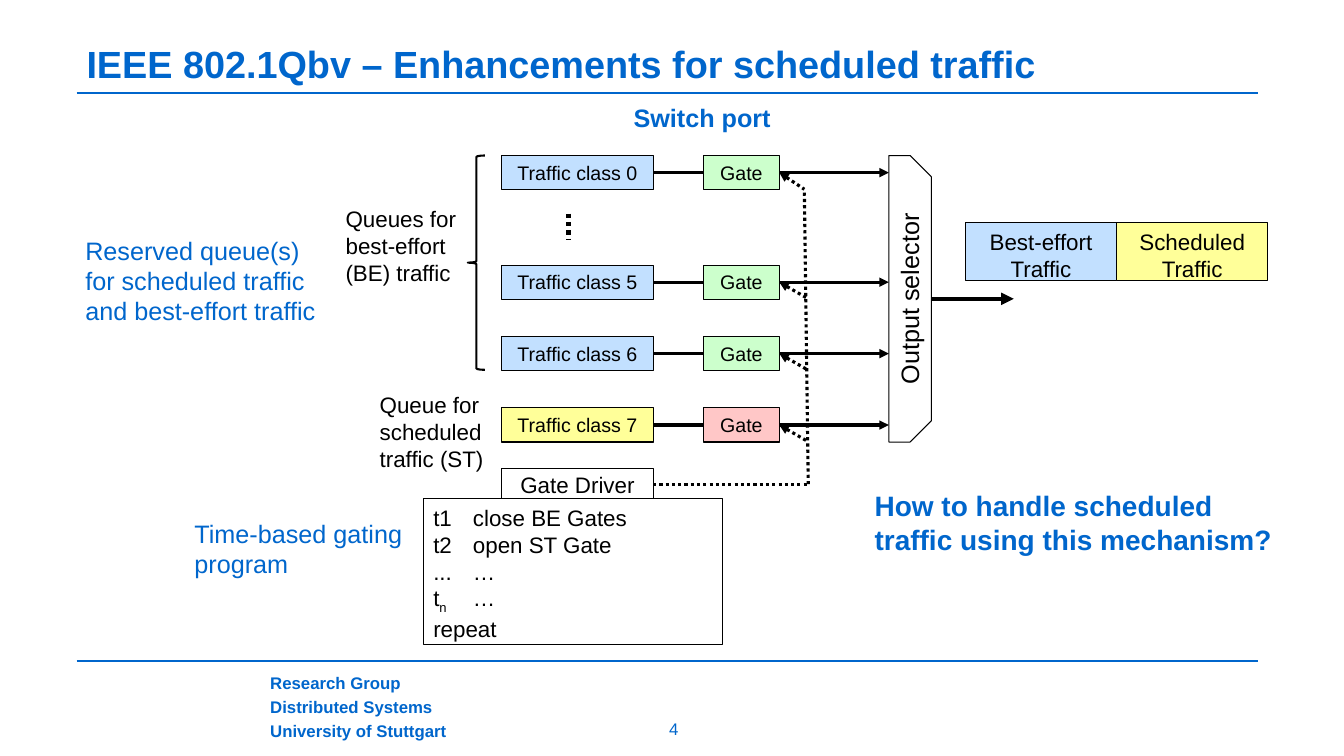
from lxml.etree import SubElement
from pptx import Presentation
from pptx.dml.color import RGBColor
from pptx.enum.dml import MSO_LINE
from pptx.enum.shapes import MSO_CONNECTOR, MSO_SHAPE
from pptx.enum.text import MSO_ANCHOR, MSO_AUTO_SIZE, PP_ALIGN
from pptx.oxml.ns import qn
from pptx.util import Cm, Pt

COLORS = {
    "accent": "0066CC",
    "ink": "000000",
    "paper": "FFFFFF",
    "best_effort": "C2E0FF",
    "scheduled": "FFFF99",
    "open_gate": "CCFFCC",
    "closed_gate": "FFC7C7",
}


def color(name):
    """Return the palette colour of that name."""
    return RGBColor.from_string(COLORS[name])


def add_run(paragraph, text, size, ink="ink", bold=False):
    """Append one formatted run to a paragraph."""
    run = paragraph.add_run()
    run.text = text
    run.font.name = "Arial"
    run.font.size = Pt(size)
    run.font.bold = bold
    run.font.color.rgb = color(ink)
    return run


def prepare_frame(frame, anchor=MSO_ANCHOR.TOP):
    """Give a text frame wrapping, standard insets and an anchor."""
    frame.word_wrap = True
    frame.auto_size = MSO_AUTO_SIZE.NONE
    frame.vertical_anchor = anchor
    frame.margin_left = frame.margin_right = Cm(0.25)
    frame.margin_top = frame.margin_bottom = Cm(0.13)


def add_label(slide, box, text, size, ink="ink", bold=False, align=PP_ALIGN.LEFT):
    """Place a one-paragraph text box."""
    label = slide.shapes.add_textbox(*map(Cm, box))
    prepare_frame(label.text_frame)
    paragraph = label.text_frame.paragraphs[0]
    paragraph.alignment = align
    add_run(paragraph, text, size, ink, bold)
    return label


def add_block(slide, box, fill, text="", size=14, anchor=MSO_ANCHOR.MIDDLE,
              preset=MSO_SHAPE.RECTANGLE):
    """Place an outlined shape with optional centred text."""
    block = slide.shapes.add_shape(preset, *map(Cm, box))
    block.shadow.inherit = False
    block.fill.solid()
    block.fill.fore_color.rgb = color(fill)
    block.line.color.rgb = color("ink")
    block.line.width = Pt(0.75)
    prepare_frame(block.text_frame, anchor)
    if text:
        paragraph = block.text_frame.paragraphs[0]
        paragraph.alignment = PP_ALIGN.CENTER
        add_run(paragraph, text, size)
    return block


def add_line(slide, start, end, width=2.25, ink="ink", dotted=False, arrow=None):
    """Draw a straight line, with an arrowhead at its headEnd or tailEnd."""
    line = slide.shapes.add_connector(
        MSO_CONNECTOR.STRAIGHT, *map(Cm, (*start, *end)))
    line.line.color.rgb = color(ink)
    line.line.width = Pt(width)
    if dotted:
        line.line.dash_style = MSO_LINE.ROUND_DOT
    if arrow:
        SubElement(line.line._get_or_add_ln(), qn(f"a:{arrow}"), type="triangle")
    SubElement(line._element.spPr, qn("a:effectLst"))


def draw_frame(slide, box):
    """Draw the title, the two rules and the footer."""
    left, top, width, height = box
    title = slide.shapes.title
    title.left, title.top, title.width, title.height = map(
        Cm, (left, top, width, 1.6))
    prepare_frame(title.text_frame, MSO_ANCHOR.MIDDLE)
    heading = title.text_frame.paragraphs[0]
    heading.alignment = PP_ALIGN.LEFT
    heading.line_spacing = 1.1
    add_run(heading, "IEEE 802.1Qbv – Enhancements for scheduled traffic",
            27, "accent", True)

    bottom_rule = top + 15.92
    for rule in (top + 1.6, bottom_rule):
        add_line(slide, (left, rule), (left + width, rule), 1, "accent")

    group = slide.shapes.add_textbox(
        *map(Cm, (left + 4.88, bottom_rule + 0.36, 6.05, 1.55))).text_frame
    group.margin_left = group.margin_right = group.margin_top = group.margin_bottom = 0
    names = ("Research Group", "Distributed Systems", "University of Stuttgart")
    for index, name in enumerate(names):
        paragraph = group.add_paragraph() if index else group.paragraphs[0]
        paragraph.line_spacing = 0.9
        paragraph.space_after = Pt(4)
        add_run(paragraph, name, 12, "accent", True)
    add_label(slide, (left + 12.14, top + height - 0.6, 5.82, 0.6), "4", 12,
              "accent", align=PP_ALIGN.CENTER)


def draw_port(slide, box):
    """Draw the queues, gates, gate driver and output selector."""
    left, top, width, height = box
    row_height, queue_width, gate_width, selector_width = 0.86, 3.81, 1.91, 1.07
    queue_left, gate_left = left + 0.86, left + 5.94
    queue_right, gate_right = queue_left + queue_width, gate_left + gate_width
    selector_left = left + width - selector_width
    bus_foot, bus_head = left + 8.58, left + 8.48
    wire = top + 8.28

    add_label(slide, (left + 3.68, top - 1.46, 4.45, 1.02), "Switch port", 18,
              "accent", True, PP_ALIGN.CENTER)
    brace = add_block(slide, (left, top, 0.43, 5.4), "paper",
                      preset=MSO_SHAPE.LEFT_BRACE)
    brace.fill.background()
    brace.line.width = Pt(1.5)
    add_label(slide, (left - 3.33, top + 1.13, 4.01, 2.31),
              "Queues for best-effort (BE) traffic", 16)
    add_label(slide, (left - 2.47, top + 5.81, 3.38, 2.31),
              "Queue for scheduled traffic (ST)", 16)
    dots = queue_left + 1.68
    add_line(slide, (dots, top + 1.46), (dots, top + 2.1), 3, dotted=True)

    add_block(slide, (queue_left, top + 7.89, queue_width, 1.04), "paper",
              "Gate Driver", 16, MSO_ANCHOR.TOP).text_frame.margin_top = Cm(0.05)
    add_line(slide, (queue_right, wire), (bus_foot, wire), dotted=True)
    add_line(slide, (bus_foot, wire), (bus_head, top + row_height), dotted=True)

    rows = (
        (0, 0, "best_effort", "open_gate", bus_head),
        (5, 2.76, "best_effort", "open_gate", bus_foot),
        (6, 4.56, "best_effort", "open_gate", bus_foot),
        (7, 6.36, "scheduled", "closed_gate", bus_foot),
    )
    for number, offset, queue_fill, gate_fill, branch in rows:
        row_top = top + offset
        middle = row_top + row_height / 2
        add_line(slide, (queue_right, middle), (gate_left, middle))
        add_line(slide, (gate_right, middle), (branch, middle + 0.42),
                 dotted=True, arrow="headEnd")
        add_line(slide, (gate_right, middle), (selector_left, middle),
                 arrow="tailEnd")
        add_block(slide, (queue_left, row_top, queue_width, row_height),
                  queue_fill, f"Traffic class {number}")
        add_block(slide, (gate_left, row_top, gate_width, row_height),
                  gate_fill, "Gate")

    sideways = (selector_left + (selector_width - height) / 2,
                top + (height - selector_width) / 2, height, selector_width)
    selector = add_block(slide, sideways, "paper",
                         preset=MSO_SHAPE.SNIP_2_SAME_RECTANGLE)
    selector.adjustments[0] = 0.5
    selector.rotation = 90
    add_label(slide, sideways, "Output selector", 18,
              align=PP_ALIGN.CENTER).rotation = 270
    output = top + height / 2
    add_line(slide, (left + width, output), (left + width + 2.08, output), 3,
             arrow="tailEnd")


def draw_traffic(slide, box):
    """Draw the two blocks of traffic leaving the port side by side."""
    left, top, width, height = box
    half = width / 2
    add_block(slide, (left, top, half, height), "best_effort",
              "Best-effort Traffic", 16, MSO_ANCHOR.TOP)
    add_block(slide, (left + half, top, half, height), "scheduled",
              "Scheduled Traffic", 16, MSO_ANCHOR.TOP)


def draw_program(slide, box):
    """Draw the gating program as tabbed lines."""
    program = add_block(slide, box, "paper", anchor=MSO_ANCHOR.TOP).text_frame
    steps = (("t1", "", "\tclose BE Gates"), ("t2", "", "\topen ST Gate"),
             ("...", "", "\t…"), ("t", "n", "\t…"), ("repeat", "", ""))
    for index, (time, subscript, action) in enumerate(steps):
        paragraph = program.add_paragraph() if index else program.paragraphs[0]
        paragraph.alignment = PP_ALIGN.LEFT
        tabs = SubElement(paragraph._p.get_or_add_pPr(), qn("a:tabLst"))
        SubElement(tabs, qn("a:tab"), pos=str(Cm(1)), algn="l")
        add_run(paragraph, time, 16)
        if subscript:
            lowered = add_run(paragraph, subscript, 16)
            lowered._r.get_or_add_rPr().set("baseline", "-25000")
        if action:
            add_run(paragraph, action, 16)


def draw_remarks(slide, box):
    """Place the blue remarks around the diagram."""
    left, top = box[:2]
    add_label(slide, (left, top, 6.78, 2.57),
              "Reserved queue(s) for scheduled traffic and best-effort traffic",
              18, "accent")
    add_label(slide, (left + 2.75, top + 7.14, 6.78, 1.8),
              "Time-based gating program", 18, "accent")
    add_label(slide, (left + 19.89, top + 6.4, 10.59, 1.96),
              "How to handle scheduled traffic using this mechanism?",
              20, "accent", True)


def main():
    """Build the slide and save it."""
    deck = Presentation()
    deck.slide_width, deck.slide_height = Cm(33.87), Cm(19.05)
    slide = deck.slides.add_slide(deck.slide_layouts[5])
    draw_frame(slide, (1.93, 0.74, 29.77, 17.84))
    draw_port(slide, (11.79, 3.92, 11.68, 7.22))
    draw_traffic(slide, (24.33, 5.61, 7.62, 1.47))
    draw_program(slide, (10.67, 12.57, 7.54, 3.68))
    draw_remarks(slide, (1.9, 5.79, 30.48, 8.94))
    deck.save("out.pptx")


if __name__ == "__main__":
    main()
